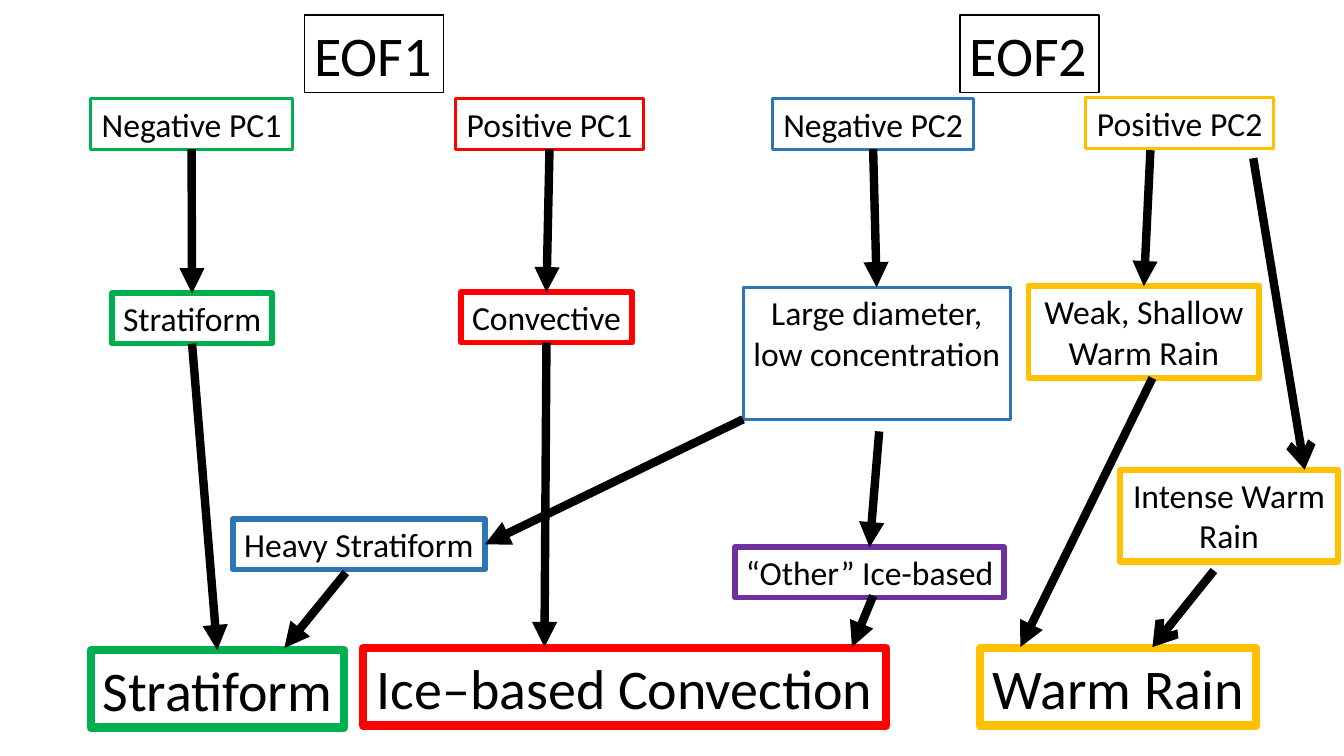
from lxml.etree import SubElement
from pptx import Presentation
from pptx.dml.color import RGBColor
from pptx.enum.shapes import MSO_CONNECTOR
from pptx.enum.text import MSO_AUTO_SIZE, PP_ALIGN
from pptx.oxml.ns import qn
from pptx.util import Pt

EMU_PER_PX = 9144
COLORS = {
    "black": "000000",
    "white": "FFFFFF",
    "green": "00B050",
    "red": "FF0000",
    "blue": "2E75B6",
    "gold": "FFC000",
    "purple": "7030A0",
}
TOP, BOTTOM, RIGHT = 0, 2, 3


def px(length):
    return length * EMU_PER_PX


def color(name):
    return RGBColor.from_string(COLORS[name])


def label(slide, text, left, top, width, height=50, *, border, weight=2,
          size=24, wrap=False, align=PP_ALIGN.CENTER):
    box = slide.shapes.add_textbox(px(left), px(top), px(width), px(height))
    box.fill.solid()
    box.fill.fore_color.rgb = color("white")
    box.line.color.rgb = color(border)
    box.line.width = Pt(weight)
    frame = box.text_frame
    frame.text = text
    frame.word_wrap = wrap
    frame.auto_size = MSO_AUTO_SIZE.SHAPE_TO_FIT_TEXT
    for paragraph in frame.paragraphs:
        paragraph.alignment = align
        paragraph.font.size = Pt(size)
        paragraph.font.name = "Calibri"
        paragraph.font.color.rgb = color("black")
    return box


def arrow(slide, start, end, end_site=TOP, head="triangle"):
    start_point = start if isinstance(start, tuple) else (0, 0)
    end_point = end if isinstance(end, tuple) else (0, 0)
    link = slide.shapes.add_connector(
        MSO_CONNECTOR.STRAIGHT, *map(px, start_point + end_point))
    if not isinstance(start, tuple):
        link.begin_connect(start, BOTTOM)
    if not isinstance(end, tuple):
        link.end_connect(end, end_site)
    link.line.color.rgb = color("black")
    link.line.width = Pt(6)
    SubElement(link.line._get_or_add_ln(), qn("a:tailEnd"), type=head)
    SubElement(link._element.spPr, qn("a:effectLst"))


def eof1_region(slide, left, top):
    label(slide, "EOF1", left + 212, top, 138, 77, border="black", weight=1,
          size=40, align=PP_ALIGN.LEFT)
    negative = label(slide, "Negative PC1", left, top + 83, 200, border="green")
    positive = label(slide, "Positive PC1", left + 362, top + 83, 186, border="red")
    stratiform = label(slide, "Stratiform", left + 21, top + 276, 159,
                       border="green", weight=4)
    convective = label(slide, "Convective", left + 367, top + 275, 170,
                       border="red", weight=4)
    heavy = label(slide, "Heavy Stratiform", left + 141, top + 500, 250,
                  border="blue", weight=4)
    arrow(slide, negative, stratiform)
    arrow(slide, positive, convective)
    return stratiform, convective, heavy


def eof2_region(slide, left, top):
    label(slide, "EOF2", left + 223, top, 138, 77, border="black", weight=1,
          size=40, align=PP_ALIGN.LEFT)
    negative = label(slide, "Negative PC2", left + 37, top + 83, 200, border="blue")
    label(slide, "Positive PC2", left + 348, top + 82, 186, border="gold")
    large_drops = label(slide, "Large diameter, low concentration", left + 8,
                        top + 270, 265, 131, border="blue", wrap=True)
    weak_rain = label(slide, "Weak, Shallow\nWarm Rain", left + 291, top + 269,
                      229, 91, border="gold", weight=4, wrap=True)
    other_ice = label(slide, "“Other” Ice-based", left, top + 528, 267,
                      border="purple", weight=4)
    label(slide, "Intense Warm\nRain", left + 382, top + 451, 216, 91,
          border="gold", weight=4.5, wrap=True)
    arrow(slide, negative, large_drops)
    arrow(slide, (left + 412, top + 134), weak_rain)
    arrow(slide, (left + 143, top + 413), other_ice)
    arrow(slide, (left + 514, top + 142), (left + 565, top + 451), head="arrow")


def outcome_row(slide, left, top):
    stratiform = label(slide, "Stratiform", left, top + 2, 251, 77,
                       border="green", weight=6, size=40)
    label(slide, "Ice–based Convection", left + 270, top, 519, 77,
          border="red", weight=6, size=40)
    label(slide, "Warm Rain", left + 882, top, 274, 77,
          border="gold", weight=6, size=40)
    return stratiform


def main():
    deck = Presentation()
    deck.slide_width, deck.slide_height = px(1333), px(750)
    slide = deck.slides.add_slide(deck.slide_layouts[6])

    stratiform, convective, heavy = eof1_region(slide, 90, 15)
    eof2_region(slide, 729, 15)
    stratiform_outcome = outcome_row(slide, 90, 643)

    arrow(slide, stratiform, stratiform_outcome)
    arrow(slide, convective, (540, 642))
    arrow(slide, (737, 416), heavy, end_site=RIGHT)
    arrow(slide, (343, 568), (282, 643))
    arrow(slide, (866, 591), (845, 642))
    arrow(slide, (1143, 375), (1012, 642))
    arrow(slide, (1204, 566), (1143, 642), head="arrow")

    deck.save("out.pptx")


if __name__ == "__main__":
    main()
